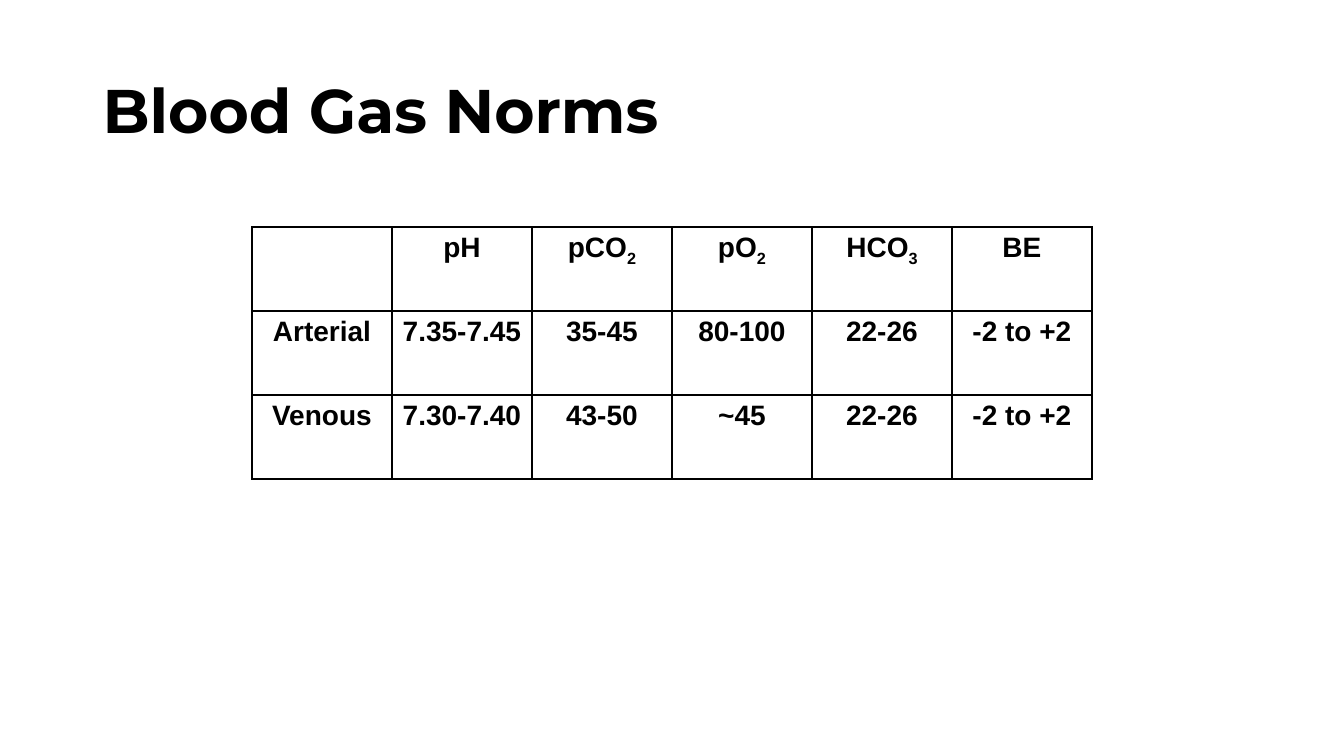
from lxml.etree import SubElement
from pptx import Presentation
from pptx.dml.color import RGBColor
from pptx.enum.text import MSO_ANCHOR, PP_ALIGN
from pptx.oxml.ns import qn
from pptx.util import Cm, Pt

BLACK = RGBColor(0x00, 0x00, 0x00)
WHITE = RGBColor(0xFF, 0xFF, 0xFF)

# Each cell holds its text and an optional subscript.
ROWS = [
    [("",), ("pH",), ("pCO", "2"), ("pO", "2"), ("HCO", "3"), ("BE",)],
    [("Arterial",), ("7.35-7.45",), ("35-45",), ("80-100",), ("22-26",), ("-2 to +2",)],
    [("Venous",), ("7.30-7.40",), ("43-50",), ("~45",), ("22-26",), ("-2 to +2",)],
]


def add_text(para, text, font="Arial", size=20, subscript=False):
    span = para.add_run()
    span.text = text
    span.font.name = font
    span.font.size = Pt(size)
    span.font.bold = True
    span.font.color.rgb = BLACK
    if subscript:
        span.font._element.set("baseline", "-25000")


def add_borders(cell, width=Pt(1)):
    properties = cell._tc.get_or_add_tcPr()
    for side in ("lnL", "lnR", "lnT", "lnB"):
        line = SubElement(properties, qn(f"a:{side}"), w=str(width))
        fill = SubElement(line, qn("a:solidFill"))
        SubElement(fill, qn("a:srgbClr"), val=str(BLACK))


deck = Presentation()
deck.slide_width = Cm(33.87)
deck.slide_height = Cm(19.05)
page = deck.slides.add_slide(deck.slide_layouts.get_by_name("Title Only"))
page.background.fill.solid()
page.background.fill.fore_color.rgb = WHITE

title = page.shapes.title
title.left, title.top = Cm(2.33), Cm(1.01)
title.width, title.height = Cm(29.21), Cm(3.68)
title.text_frame.vertical_anchor = MSO_ANCHOR.MIDDLE
heading = title.text_frame.paragraphs[0]
heading.alignment = PP_ALIGN.LEFT
heading.line_spacing = 0.9
add_text(heading, "Blood Gas Norms", font="Montserrat", size=44)

norms = page.shapes.add_table(
    len(ROWS), len(ROWS[0]), Cm(6.35), Cm(5.72), Cm(21.17), Cm(6.35)
).table
norms.first_row = False
norms.horz_banding = False

for row_index, row in enumerate(ROWS):
    for column_index, (text, *subscripts) in enumerate(row):
        cell = norms.cell(row_index, column_index)
        add_borders(cell)
        cell.fill.background()
        para = cell.text_frame.paragraphs[0]
        para.alignment = PP_ALIGN.CENTER
        if text:
            add_text(para, text)
        for subscript in subscripts:
            add_text(para, subscript, subscript=True)

deck.save("out.pptx")
